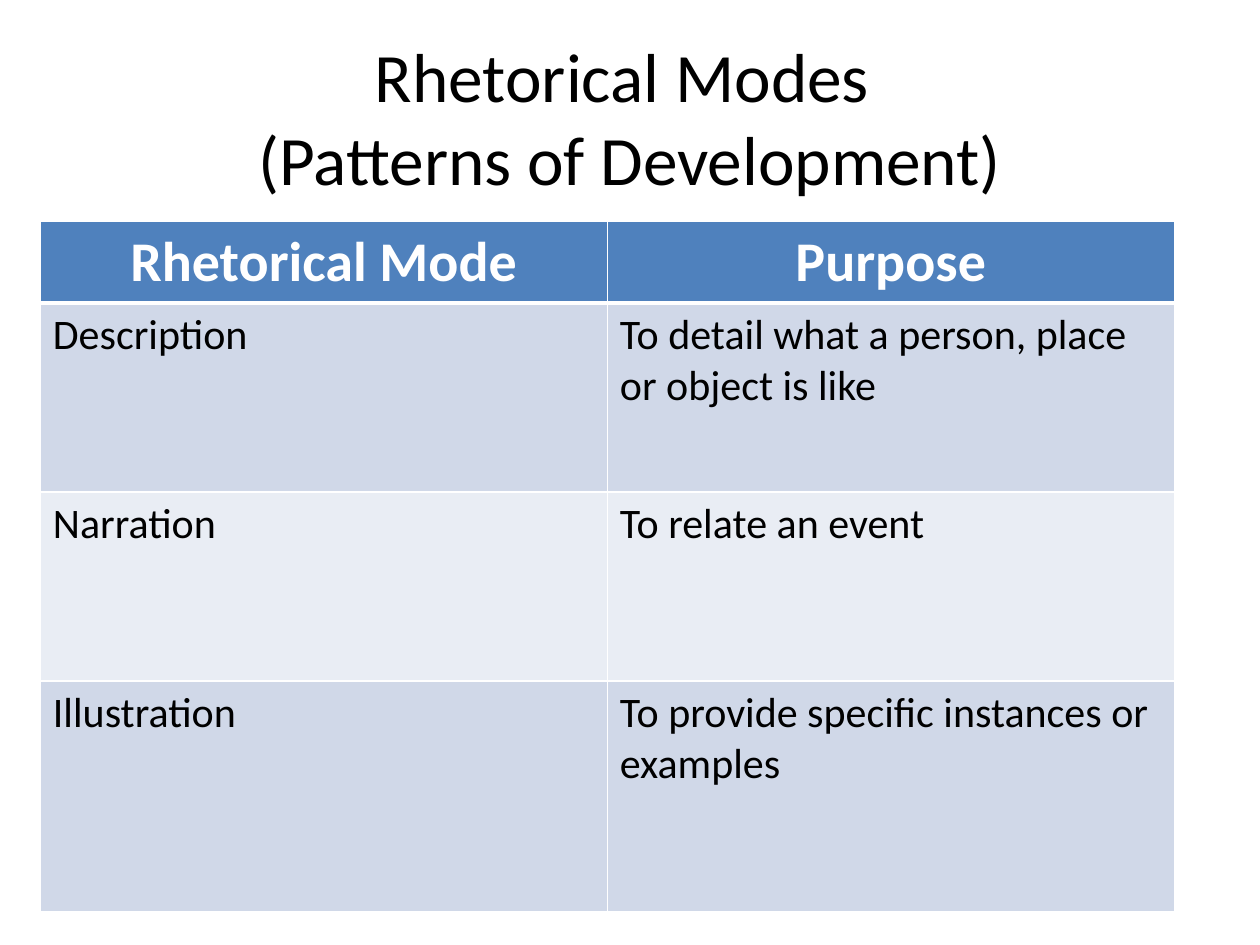
from dataclasses import dataclass

from lxml.etree import SubElement
from pptx import Presentation
from pptx.dml.color import RGBColor as RGB
from pptx.enum.text import MSO_ANCHOR as Anchor, PP_ALIGN as Align
from pptx.oxml.ns import qn
from pptx.util import Inches, Pt

COLORS = {
    "head": "4F81BD",
    "odd": "D0D8E8",
    "even": "E9EDF4",
    "white": "FFFFFF",
    "black": "000000",
}
FONT = "Calibri"


@dataclass
class Row:
    mode: str
    purpose: str
    height: float
    fill: str
    head: bool = False


ROWS = [
    Row("Rhetorical Mode", "Purpose", 0.64, "head", head=True),
    Row("Description", "To detail what a person, place or object is like", 1.5, "odd"),
    Row("Narration", "To relate an event", 1.5, "even"),
    Row("Illustration", "To provide specific instances or examples", 1.83, "odd"),
]


def put_text(frame, text: str, *, size: float, color: str = "black",
             bold: bool = False, align=Align.LEFT) -> None:
    """Fill a text frame with one paragraph; \\v breaks the line."""
    para = frame.paragraphs[0]
    para.text = text
    para.alignment = align
    for run in para.runs:
        font = run.font
        font.name, font.size, font.bold = FONT, Pt(size), bold
        font.color.rgb = RGB.from_string(COLORS[color])


def set_edge(cell, side: str, width: float) -> None:
    line = SubElement(cell._tc.get_or_add_tcPr(), qn(f"a:ln{side}"), w=str(Pt(width)))
    fill = SubElement(line, qn("a:solidFill"))
    SubElement(fill, qn("a:srgbClr"), val=COLORS["white"])


def draw_row(table, index: int, row: Row) -> None:
    table.rows[index].height = Inches(row.height)
    style = (dict(size=32, color="white", bold=True, align=Align.CENTER)
             if row.head else dict(size=24))
    edges = {"L": 1, "R": 1, "T": 3 if index == 1 else 1, "B": 3 if row.head else 1}
    for cell, text in zip(table.rows[index].cells, (row.mode, row.purpose)):
        put_text(cell.text_frame, text, **style)
        # Edges come before the fill in the cell properties
        for side, width in edges.items():
            set_edge(cell, side, width)
        cell.fill.solid()
        cell.fill.fore_color.rgb = RGB.from_string(COLORS[row.fill])


def main() -> None:
    deck = Presentation()
    deck.slide_width, deck.slide_height = Inches(10), Inches(7.5)
    slide = deck.slides.add_slide(deck.slide_layouts[5])

    # Title
    title = slide.shapes.title
    title.left, title.top = Inches(0.5), Inches(0.3)
    title.width, title.height = Inches(9), Inches(1.25)
    title.text_frame.vertical_anchor = Anchor.MIDDLE
    put_text(title.text_frame, "Rhetorical Modes \v(Patterns of Development)",
             size=39.6, align=Align.CENTER)

    # Table of modes
    total = sum(row.height for row in ROWS)
    table = slide.shapes.add_table(len(ROWS), 2, Inches(0.32), Inches(1.76),
                                   Inches(9), Inches(total)).table
    for index, row in enumerate(ROWS):
        draw_row(table, index, row)

    deck.save("out.pptx")


if __name__ == "__main__":
    main()
